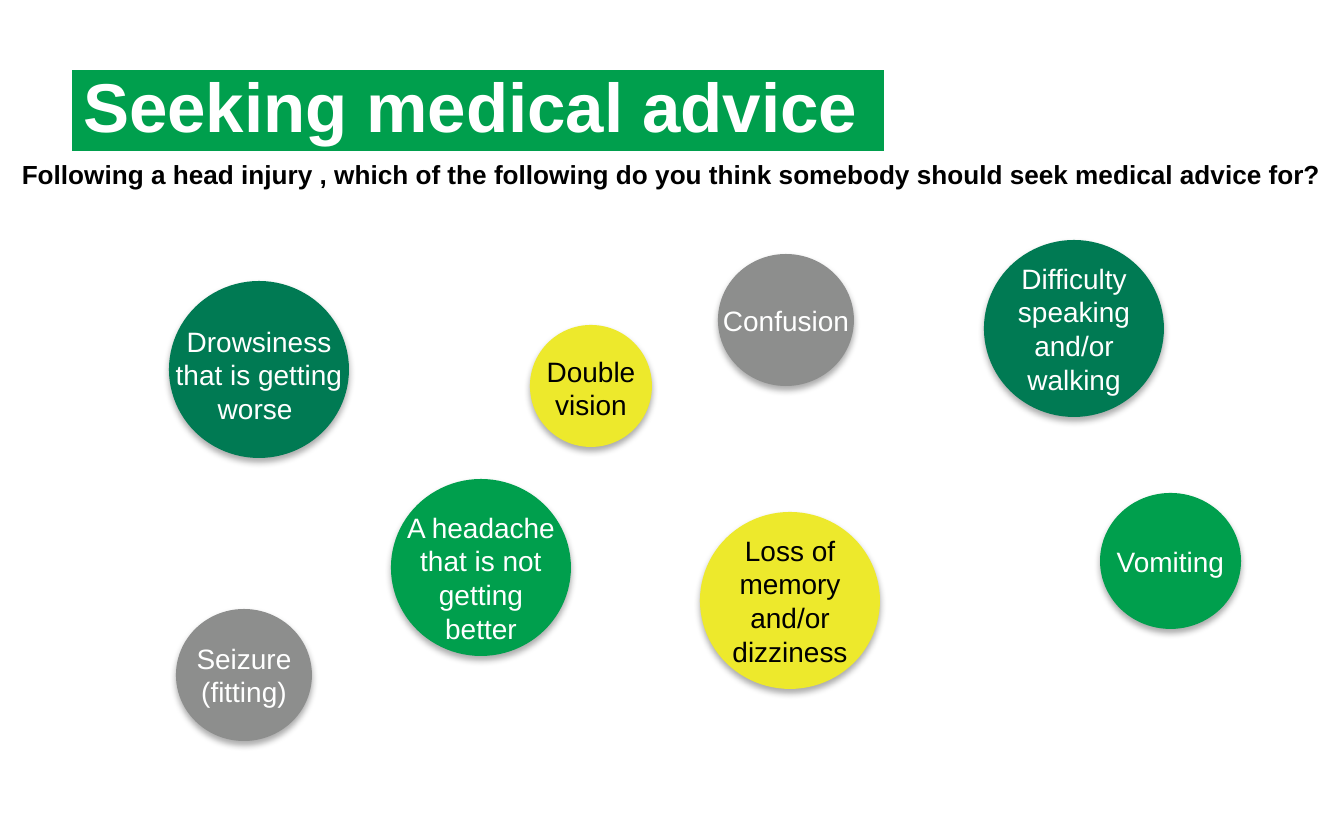
from lxml import etree
from pptx import Presentation
from pptx.dml.color import RGBColor
from pptx.enum.shapes import MSO_SHAPE
from pptx.enum.text import MSO_ANCHOR, MSO_AUTO_SIZE, PP_ALIGN
from pptx.oxml.ns import qn
from pptx.util import Emu, Pt

OVAL = MSO_SHAPE.OVAL
MIDDLE, TOP = MSO_ANCHOR.MIDDLE, MSO_ANCHOR.TOP
LEFT, CENTER = PP_ALIGN.LEFT, PP_ALIGN.CENTER
NO_FIT = MSO_AUTO_SIZE.NONE

PX = 914400 / 134.4  # EMU per px
FONT = "Arial"
LINE_H, PAD = 34, 14  # label line height and total vertical inset
COLORS = {
    "green": "009F4D",
    "dark": "007A53",
    "yellow": "EDE92C",
    "grey": "8D8E8D",
    "white": "FFFFFF",
    "black": "000000",
}

# text, lines, circle box, fill, text colour, label width, label drop
SYMPTOMS = [
    ("Drowsiness that is getting worse ", 3, (169, 281, 180, 177), "dark", "white", 199, 5),
    ("Double vision", 2, (530, 325, 122, 122), "yellow", "black", 144, 2),
    ("Confusion", 1, (718, 254, 136, 132), "grey", "white", 199, 0),
    ("Difficulty speaking and/or walking", 4, (984, 240, 180, 177), "dark", "white", 199, 0),
    ("Seizure (fitting)", 2, (176, 609, 136, 132), "grey", "white", 199, 0),
    ("A headache that is not getting better", 4, (391, 479, 180, 177), "green", "white", 180, 10),
    ("Loss of memory and/or dizziness", 4, (700, 512, 180, 177), "yellow", "black", 199, 0),
    ("Vomiting", 1, (1100, 493, 141, 136), "green", "white", 180, 0),
]


def px(n):
    return Emu(round(n * PX))


def rgb(name):
    return RGBColor.from_string(COLORS[name])


def set_text(sp, text, size, color, bold=False, align=CENTER, anchor=MIDDLE):
    tf = sp.text_frame
    tf.text = text
    tf.word_wrap = True
    tf.auto_size = NO_FIT
    tf.vertical_anchor = anchor
    p = tf.paragraphs[0]
    p.alignment = align
    font = p.runs[0].font
    font.name, font.size, font.bold = FONT, Pt(size), bold
    font.color.rgb = rgb(color)
    return p


def add_soft_shadow(sp):
    sp.shadow.inherit = False
    effects = sp._element.spPr.find(qn("a:effectLst"))
    shadow = etree.SubElement(effects, qn("a:outerShdw"), blurRad=str(Pt(3.5)),
                              dist=str(Pt(2.2)), dir="5400000", rotWithShape="0")
    clr = etree.SubElement(shadow, qn("a:srgbClr"), val=COLORS["black"])
    etree.SubElement(clr, qn("a:alpha"), val="32000")


def add_title(s, box, text):
    sp = s.shapes.title
    sp.left, sp.top, sp.width, sp.height = map(px, box)
    sp.fill.solid()
    sp.fill.fore_color.rgb = rgb("green")
    p = set_text(sp, text, 37, "white", bold=True, align=LEFT)
    p.line_spacing = 0.9
    tf = sp.text_frame
    tf.margin_left = tf.margin_right = px(11)
    tf.margin_top = tf.margin_bottom = px(5)


def add_question(s, box, text):
    sp = s.shapes.add_textbox(*map(px, box))
    set_text(sp, text, 14, "black", bold=True, anchor=TOP)


def add_symptom(s, box, text, lines, fill, color, label_w, drop):
    x, y, w, h = box
    group = s.shapes.add_group_shape()
    # Circle
    sp = group.shapes.add_shape(OVAL, *map(px, box))
    sp.fill.solid()
    sp.fill.fore_color.rgb = rgb(fill)
    sp.line.fill.background()
    add_soft_shadow(sp)
    # Label centred on the circle
    label_h = lines * LINE_H + PAD
    label = (x + (w - label_w) / 2, y + (h - label_h) / 2 + drop, label_w, label_h)
    set_text(group.shapes.add_textbox(*map(px, label)), text, 15, color)


def main():
    prs = Presentation()
    prs.slide_width, prs.slide_height = px(1344), px(840)
    s = prs.slides.add_slide(prs.slide_layouts[5])

    add_title(s, (72, 70, 812, 81), "Seeking medical advice")
    add_question(s, (0, 152, 1344, 46),
                 "Following a head injury , which of the following do you think "
                 "somebody should seek medical advice for?")
    for text, lines, box, fill, color, label_w, drop in SYMPTOMS:
        add_symptom(s, box, text, lines, fill, color, label_w, drop)

    prs.save("out.pptx")


if __name__ == "__main__":
    main()
